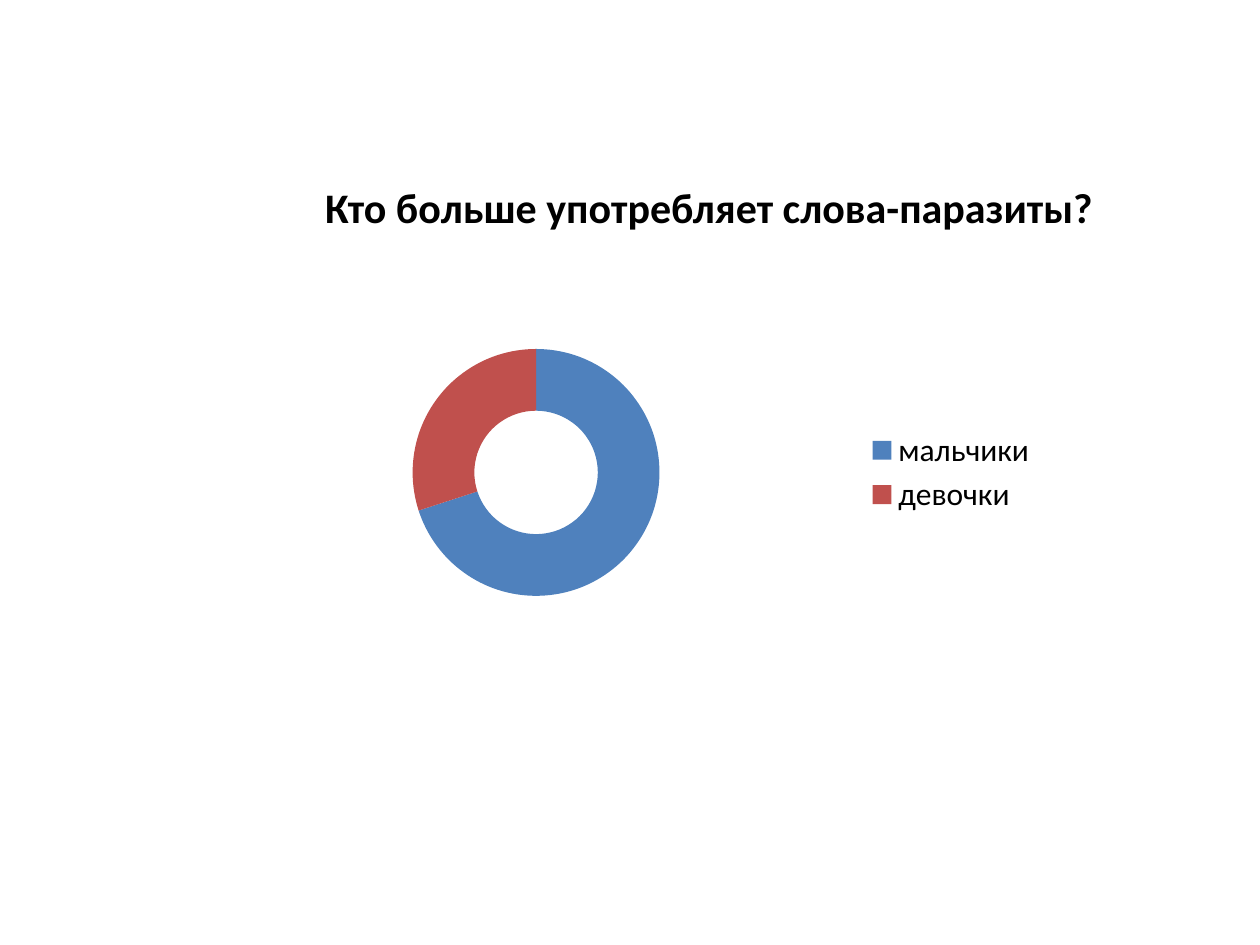
from pptx import Presentation
from pptx.chart.data import CategoryChartData as Data
from pptx.dml.color import RGBColor as Rgb
from pptx.enum.chart import XL_CHART_TYPE as Kind, XL_LEGEND_POSITION as Side
from pptx.enum.text import MSO_ANCHOR as Anchor, MSO_AUTO_SIZE as Fit, PP_ALIGN as Align
from pptx.oxml import parse_xml
from pptx.oxml.ns import nsdecls
from pptx.util import Inches, Pt

ink = {"text": "000000", "boys": "4F81BD", "girls": "C0504D",
       "third": "9BBB59", "fourth": "8064A2"}
hues = ["boys", "girls", "third", "fourth"]
font = "Calibri"

deck = Presentation()
deck.slide_width, deck.slide_height = Inches(10), Inches(7.5)
wide, high = deck.slide_width, deck.slide_height
slide = deck.slides.add_slide(deck.slide_layouts[5])

data = Data()
data.categories = ["мальчики", "девочки", "", ""]
data.add_series("Series 1", [70, 30, None, None])
for num in (2, 3):
    data.add_series(f"Series {num}", [None] * 4)

size = int(wide * 2 / 3), int(high * 0.592)
left, top = (wide - size[0]) // 2, (high - size[1]) // 2
chart = slide.shapes.add_chart(Kind.DOUGHNUT, left, top, *size, data).chart
chart.has_title = False
chart.font.name = font
chart.font.size = Pt(18)
chart.font.color.rgb = Rgb.from_string(ink["text"])

plot = chart.plots[0]
plot.vary_by_categories = True
for ring in plot.series:
    for spot, hue in enumerate(hues):
        fill = ring.points[spot].format.fill
        fill.solid()
        fill.fore_color.rgb = Rgb.from_string(ink[hue])
    label = ring._element.find("{*}tx")
    label.addnext(parse_xml(f'<c:explosion {nsdecls("c")} val="25"/>'))

chart.has_legend = True
legend = chart.legend
legend.position = Side.RIGHT
legend.include_in_layout = False
place = legend._element.find("{*}legendPos")
for num in (3, 2):
    place.addnext(parse_xml(
        f'<c:legendEntry {nsdecls("c")}><c:idx val="{num}"/>'
        '<c:delete val="1"/></c:legendEntry>'))

title = slide.shapes.title
title.left, title.top = int(wide * 0.248), int(high * 0.185)
title.width, title.height = int(wide * 0.635), int(high * 0.067)
title.element.getparent().append(title.element)
frame = title.text_frame
frame.word_wrap = False
frame.auto_size = Fit.SHAPE_TO_FIT_TEXT
frame.vertical_anchor = Anchor.TOP
para = frame.paragraphs[0]
para.alignment = Align.LEFT
run = para.add_run()
run.text = "Кто больше употребляет слова-паразиты?"
run.font.name = font
run.font.size = Pt(24)
run.font.bold = True
run.font.color.rgb = Rgb.from_string(ink["text"])

deck.save("out.pptx")
